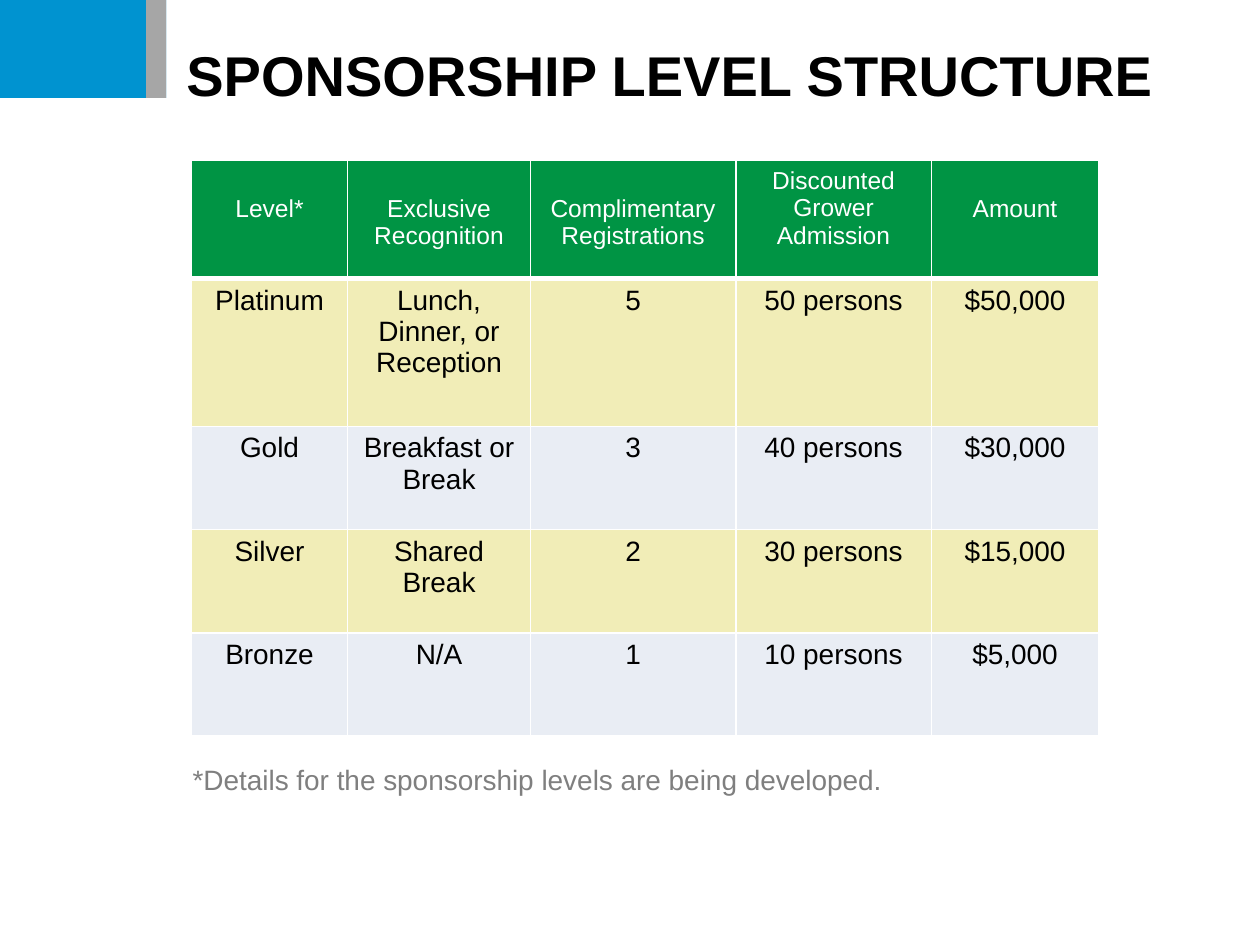
from dataclasses import dataclass

from lxml.etree import SubElement
from pptx import Presentation
from pptx.dml.color import RGBColor
from pptx.enum.shapes import MSO_SHAPE
from pptx.enum.text import MSO_ANCHOR, PP_ALIGN
from pptx.oxml.ns import qn
from pptx.util import Pt


@dataclass(frozen=True)
class Theme:
    """Colours, font and type sizes of the slide."""
    font: str = "Arial"
    black: str = "000000"
    white: str = "FFFFFF"
    note: str = "7F7F7F"
    green: str = "009444"
    bands: tuple = ("F1EDB7", "E9EDF4")
    blue: str = "0093D0"
    grey: str = "A6A6A6"
    title_size: int = 32
    header_size: int = 14
    body_size: int = 16


THEME = Theme()
COLUMN_WIDTHS = (89.3, 104.4, 117.4, 111.7, 95.8)
ROW_HEIGHTS = (67.5, 84.4, 59, 59, 59)
CELL_MARGIN = 3.6
HEADER_DROP = 16.1
HEADERS = (
    "Level*",
    "Exclusive\nRecognition",
    "Complimentary Registrations",
    "Discounted Grower Admission",
    "Amount",
)
LEVELS = (
    ("Platinum", "Lunch, Dinner, or\nReception", "5", "50 persons", "$50,000"),
    ("Gold", "Breakfast or Break", "3", "40 persons", "$30,000"),
    ("Silver", "Shared Break", "2", "30 persons", "$15,000"),
    ("Bronze", "N/A", "1", "10 persons", "$5,000"),
)


def write_text(text_frame, text, size, color, bold=False, align=PP_ALIGN.LEFT):
    """Fill a text frame and format every run."""
    text_frame.text = text
    for paragraph in text_frame.paragraphs:
        paragraph.alignment = align
        for run in paragraph.runs:
            run.font.name = THEME.font
            run.font.size = Pt(size)
            run.font.bold = bold
            run.font.color.rgb = RGBColor.from_string(color)


def add_label(slide, box, text, size, color, bold=False, wrap=True):
    """Add a vertically centred text box."""
    text_frame = slide.shapes.add_textbox(*map(Pt, box)).text_frame
    text_frame.word_wrap = wrap
    text_frame.vertical_anchor = MSO_ANCHOR.MIDDLE
    write_text(text_frame, text, size, color, bold)


def add_block(slide, box, color):
    """Add a plain filled rectangle."""
    shape = slide.shapes.add_shape(MSO_SHAPE.RECTANGLE, *map(Pt, box))
    shape.shadow.inherit = False
    shape.fill.solid()
    shape.fill.fore_color.rgb = RGBColor.from_string(color)
    shape.line.fill.background()


def add_borders(cell, bottom_width):
    """Draw white borders on all four sides of a cell."""
    properties = cell._tc.get_or_add_tcPr()
    for side, width in (("L", 1), ("R", 1), ("T", 1), ("B", bottom_width)):
        line = SubElement(properties, qn(f"a:ln{side}"), w=str(Pt(width)))
        fill = SubElement(line, qn("a:solidFill"))
        SubElement(fill, qn("a:srgbClr"), val=THEME.white)


def format_cell(cell, text, size, color, fill, bottom_width=1):
    """Set the borders, fill and centred text of a cell."""
    add_borders(cell, bottom_width)
    cell.fill.solid()
    cell.fill.fore_color.rgb = RGBColor.from_string(fill)
    write_text(cell.text_frame, text, size, color, align=PP_ALIGN.CENTER)


def add_sponsorship_table(slide, left, top):
    """Add the table of sponsorship levels."""
    frame = slide.shapes.add_table(
        len(ROW_HEIGHTS), len(COLUMN_WIDTHS), Pt(left), Pt(top),
        Pt(sum(COLUMN_WIDTHS)), Pt(sum(ROW_HEIGHTS)))
    table = frame.table
    for column, width in zip(table.columns, COLUMN_WIDTHS):
        column.width = Pt(width)
    for row, height in zip(table.rows, ROW_HEIGHTS):
        row.height = Pt(height)
    for index, text in enumerate(HEADERS):
        cell = table.cell(0, index)
        drop = 0 if text.startswith("Discounted") else HEADER_DROP
        cell.margin_top = Pt(CELL_MARGIN + drop)
        format_cell(cell, text, THEME.header_size, THEME.white, THEME.green, 3)
    for row_index, level in enumerate(LEVELS):
        fill = THEME.bands[row_index % 2]
        for index, text in enumerate(level):
            format_cell(table.cell(row_index + 1, index), text,
                        THEME.body_size, THEME.black, fill)


def main():
    """Build and save the sponsorship slide."""
    presentation = Presentation()
    presentation.slide_width, presentation.slide_height = Pt(720), Pt(540)
    slide = presentation.slides.add_slide(presentation.slide_layouts[6])
    add_label(slide, (99.4, 18.7, 575.3, 47.5), "SPONSORSHIP LEVEL STRUCTURE",
              THEME.title_size, THEME.black, bold=True)
    add_sponsorship_table(slide, 109.4, 91.8)
    add_label(slide, (103, 432, 413.3, 26.6),
              "*Details for the sponsorship levels are being developed.",
              THEME.body_size, THEME.note, wrap=False)
    add_block(slide, (0, 0, 95, 56), THEME.blue)
    add_block(slide, (83.5, 0, 11.5, 56), THEME.grey)
    presentation.save("out.pptx")


if __name__ == "__main__":
    main()
